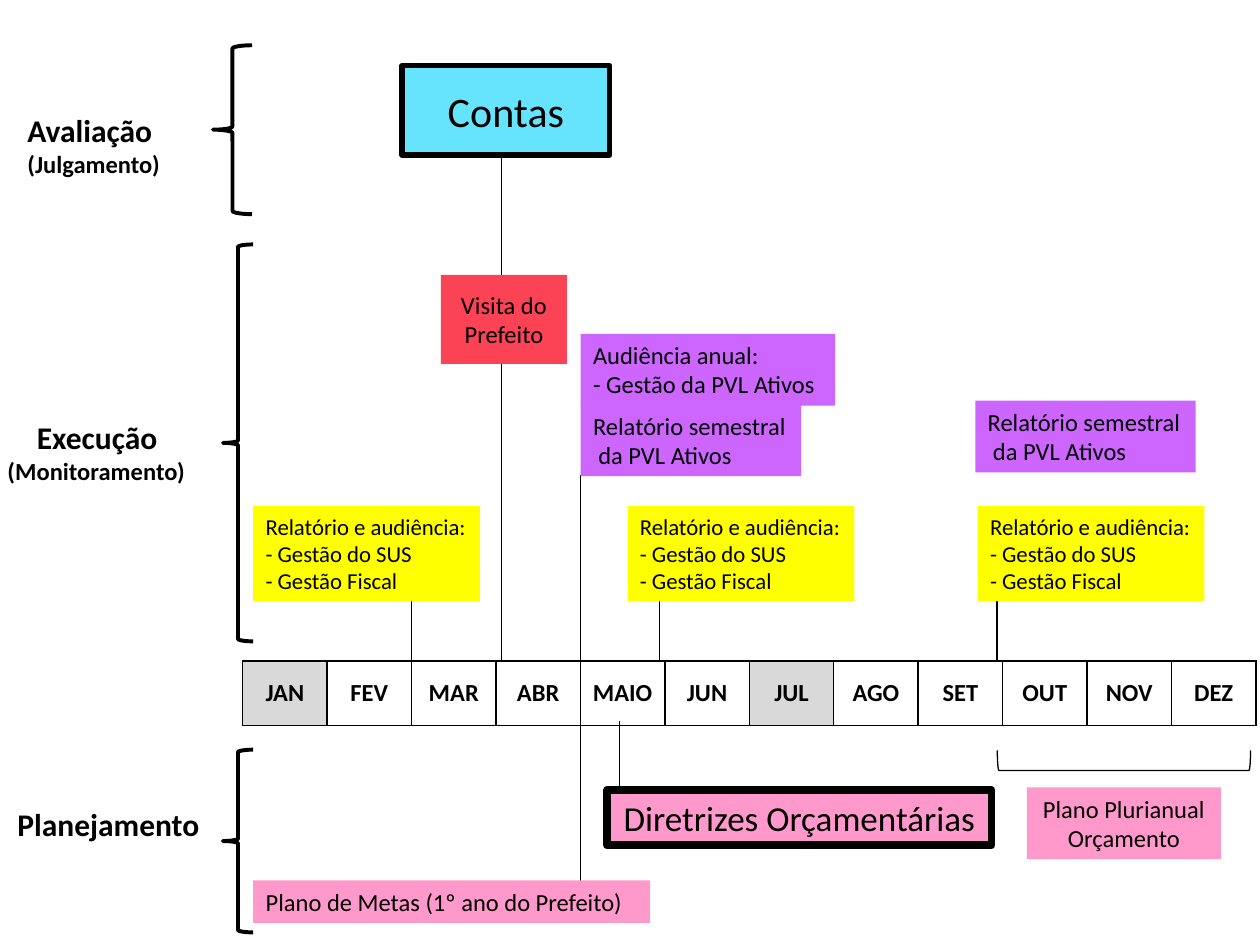
from lxml.etree import SubElement
from pptx import Presentation
from pptx.dml.color import RGBColor
from pptx.enum.shapes import MSO_CONNECTOR, MSO_SHAPE
from pptx.enum.text import MSO_ANCHOR, MSO_AUTO_SIZE, PP_ALIGN
from pptx.oxml.ns import qn
from pptx.util import Pt

FONT = "Calibri"
COLORS = {
    "black": "000000", "white": "FFFFFF", "gray": "D9D9D9", "cyan": "67E4FD",
    "red": "FB4355", "yellow": "FFFF00", "purple": "CC66FF", "pink": "FF99CC",
}

MONTHS = ["JAN", "FEV", "MAR", "ABR", "MAIO", "JUN",
          "JUL", "AGO", "SET", "OUT", "NOV", "DEZ"]
RECESS_MONTHS = {"JAN", "JUL"}
CALENDAR_LEFT, CALENDAR_TOP = 138.7, 377.8
MONTH_WIDTH, MONTH_HEIGHT = 48.25, 36.9

# Lines of text with their sizes, then left, top, width, height
PHASES = [
    ([("Avaliação", 18), ("(Julgamento)", 14)], (8.6, 60, 90.7, 46)),
    ([("Execução", 18), ("(Monitoramento)", 14)], (-2.8, 235.6, 116.6, 46)),
    ([("Planejamento", 18)], (2.9, 456.5, 119.5, 29)),
]
PHASE_BRACES = [(121.7, 25.9, 22.3, 96.5), (127.4, 139.7, 17.3, 226.8),
                (127.4, 428.4, 17.3, 104.4)]
QUARTER_BRACKET = (636.5, 362.2, 11.5, 144.7)

# x, start y, end y, weight
EVENT_LINES = [
    (286.6, 377.8, 82.8, 0.25),
    (235.2, 377.8, 343.4, 0.75),
    (569.7, 377.8, 343.4, 0.75),
    (377, 377.8, 343.4, 0.75),
    (331.8, 383, 271.4, 0.75),
    (331.8, 414.7, 504.7, 0.75),
    (354.2, 411.8, 456.5, 0.75),
]

HEALTH_REPORT = ["Relatório e audiência:", "- Gestão do SUS", "- Gestão Fiscal"]
HALF_YEAR_REPORT = ["Relatório semestral", "da PVL Ativos"]
HEALTH_REPORT_LEFTS = [144.7, 358.6, 558.7]
HALF_YEAR_REPORT_PLACES = [(331.8, 231.2), (557.3, 229)]

# Lines, frame, fill, size, and the settings that differ from add_event's
EVENTS = [
    (["Contas"], (229.7, 37.6, 118.8, 51), "cyan", 24,
     dict(centered=True, grow=False, border=3)),
    (["Visita do", "Prefeito"], (252, 157, 72, 51), "red", 14,
     dict(centered=True, grow=False)),
    (["Audiência anual:", "- Gestão da PVL Ativos"],
     (331.8, 190.8, 145.4, 41), "purple", 14, dict(wrap=False)),
    (["Plano Plurianual", "Orçamento"], (586.8, 450, 110.9, 41), "pink", 14,
     dict(centered=True, wrap=False)),
    (["Plano de Metas (1º ano do Prefeito)"],
     (144.7, 503.1, 226.8, 24.3), "pink", 14, {}),
    (["Diretrizes Orçamentárias"], (347, 451.4, 219.6, 31.7), "pink", 20,
     dict(centered=True, wrap=False, border=4.5)),
]
EVENTS += [(HEALTH_REPORT, (left, 289.2, 129.6, 54.4), "yellow", 13, {})
           for left in HEALTH_REPORT_LEFTS]
EVENTS += [(HALF_YEAR_REPORT, (left, top, 126, 41), "purple", 14,
            dict(wrap=False, last_indent=3))
           for left, top in HALF_YEAR_REPORT_PLACES]


def color(name):
    return RGBColor.from_string(COLORS[name])


def points(*lengths):
    return [Pt(length) for length in lengths]


def set_fill(target, name):
    target.fill.solid()
    target.fill.fore_color.rgb = color(name)


def set_line(line, weight):
    line.color.rgb = color("black")
    line.width = Pt(weight)


def style_font(paragraph, size, bold=False):
    for run in paragraph.runs:
        run.font.name = FONT
        run.font.size = Pt(size)
        run.font.bold = bold
        run.font.color.rgb = color("black")


def set_borders(cell):
    properties = cell._tc.get_or_add_tcPr()
    for side in ("a:lnL", "a:lnR", "a:lnT", "a:lnB"):
        border = SubElement(properties, qn(side), w=str(Pt(1)))
        fill = SubElement(border, qn("a:solidFill"))
        SubElement(fill, qn("a:srgbClr"), val=COLORS["black"])


def add_calendar(slide):
    frame = slide.shapes.add_table(1, len(MONTHS), *points(
        CALENDAR_LEFT, CALENDAR_TOP, MONTH_WIDTH * len(MONTHS), MONTH_HEIGHT))
    table = frame.table
    table.first_row = table.horz_banding = False
    for column, month in enumerate(MONTHS):
        table.columns[column].width = Pt(MONTH_WIDTH)
        cell = table.cell(0, column)
        cell.margin_left = cell.margin_right = 0
        cell.margin_top = cell.margin_bottom = 0
        cell.vertical_anchor = MSO_ANCHOR.MIDDLE
        set_borders(cell)
        set_fill(cell, "gray" if month in RECESS_MONTHS else "white")
        paragraph = cell.text_frame.paragraphs[0]
        paragraph.text = month
        paragraph.alignment = PP_ALIGN.CENTER
        style_font(paragraph, 14, bold=True)


def add_phase(slide, lines, frame):
    text_frame = slide.shapes.add_textbox(*points(*frame)).text_frame
    text_frame.text = "\n".join(text for text, size in lines)
    text_frame.word_wrap = False
    text_frame.auto_size = MSO_AUTO_SIZE.SHAPE_TO_FIT_TEXT
    for paragraph, (text, size) in zip(text_frame.paragraphs, lines):
        if text == "Execução":
            paragraph.alignment = PP_ALIGN.CENTER
        style_font(paragraph, size, bold=True)


def add_outline(slide, kind, frame, weight):
    shape = slide.shapes.add_shape(kind, *points(*frame))
    shape.shadow.inherit = False
    shape.fill.background()
    set_line(shape.line, weight)
    return shape


def add_event_line(slide, x, start, end, weight):
    connector = slide.shapes.add_connector(
        MSO_CONNECTOR.STRAIGHT, *points(x, start, x, end))
    set_line(connector.line, weight)
    SubElement(connector._element.spPr, qn("a:effectLst"))


def add_event(slide, lines, frame, fill, size, centered=False, grow=True,
              wrap=True, border=None, last_indent=0):
    shape = slide.shapes.add_shape(MSO_SHAPE.RECTANGLE, *points(*frame))
    shape.shadow.inherit = False
    set_fill(shape, fill)
    if border:
        set_line(shape.line, border)
    else:
        shape.line.fill.background()
    text_frame = shape.text_frame
    text_frame.text = "\n".join(lines)
    text_frame.word_wrap = wrap
    text_frame.vertical_anchor = MSO_ANCHOR.TOP if grow else MSO_ANCHOR.MIDDLE
    if grow:
        text_frame.auto_size = MSO_AUTO_SIZE.SHAPE_TO_FIT_TEXT
    for paragraph in text_frame.paragraphs:
        paragraph.alignment = PP_ALIGN.CENTER if centered else PP_ALIGN.LEFT
        style_font(paragraph, size)
    if last_indent:
        properties = text_frame.paragraphs[-1]._p.get_or_add_pPr()
        properties.set("marL", str(Pt(last_indent)))


def main():
    presentation = Presentation()
    presentation.slide_width, presentation.slide_height = points(720, 540)
    slide = presentation.slides.add_slide(presentation.slide_layouts[6])
    add_calendar(slide)
    for lines, frame in PHASES:
        add_phase(slide, lines, frame)
    for frame in PHASE_BRACES:
        add_outline(slide, MSO_SHAPE.LEFT_BRACE, frame, 2.25)
    bracket = add_outline(slide, MSO_SHAPE.LEFT_BRACKET, QUARTER_BRACKET, 0.75)
    bracket.rotation = 270
    for event_line in EVENT_LINES:
        add_event_line(slide, *event_line)
    for *event, settings in EVENTS:
        add_event(slide, *event, **settings)
    presentation.save("out.pptx")


if __name__ == "__main__":
    main()
